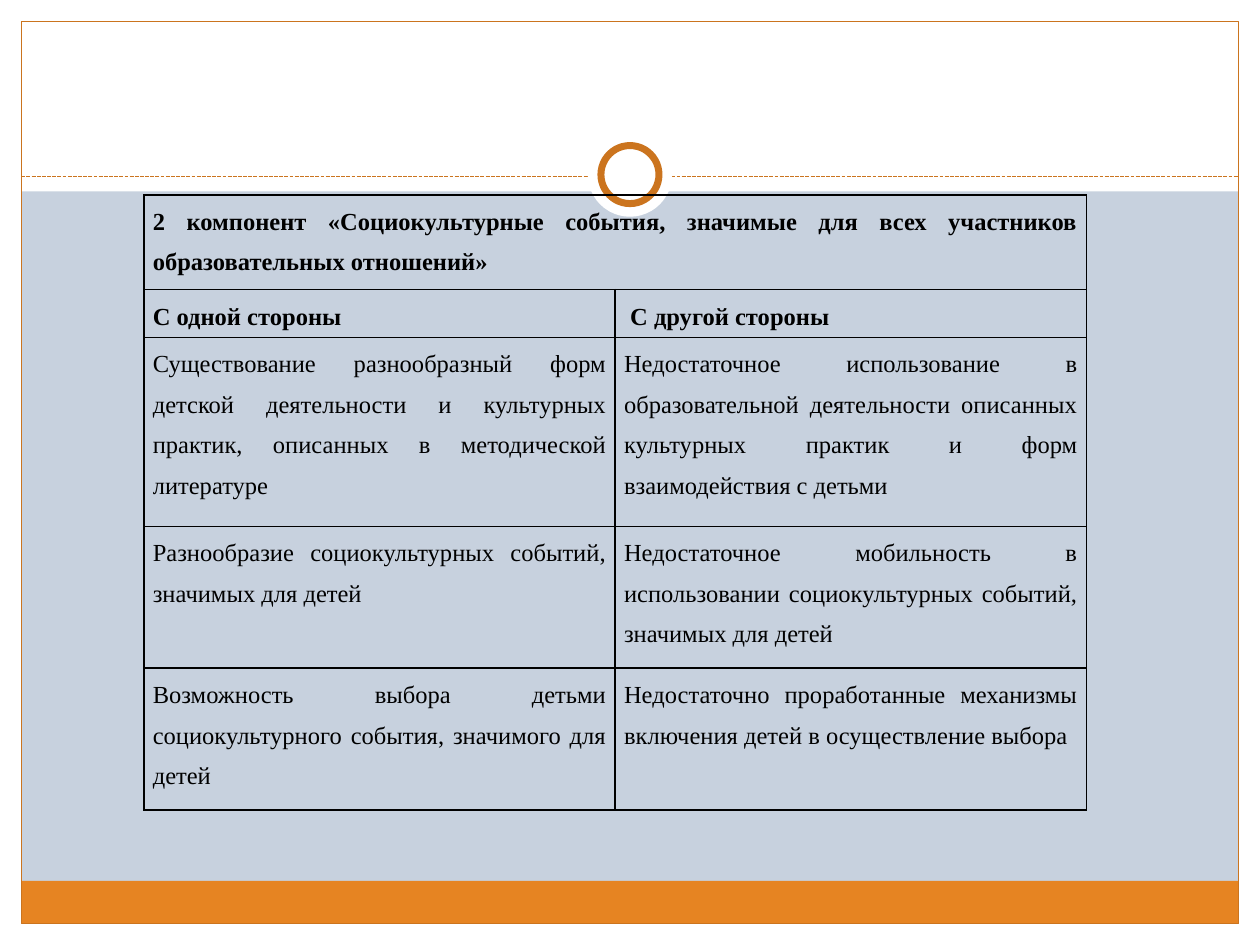
from lxml.etree import SubElement as Sub
from pptx import Presentation
from pptx.dml.color import RGBColor
from pptx.enum.dml import MSO_LINE
from pptx.enum.shapes import MSO_CONNECTOR, MSO_SHAPE as Shape
from pptx.enum.text import PP_ALIGN
from pptx.oxml.ns import qn
from pptx.util import Cm, Pt

WHITE = RGBColor(0xFF, 0xFF, 0xFF)
BLACK = RGBColor(0, 0, 0)
BLUE = RGBColor(0xC7, 0xD1, 0xDE)
ORANGE = RGBColor(0xE6, 0x84, 0x22)
RUST = RGBColor(0xCB, 0x74, 0x1E)
FONT = "Times New Roman"

TITLE = "2 компонент «Социокультурные события, значимые для всех участников образовательных отношений»"
ROWS = [
    (TITLE, ""),
    ("С одной стороны", " С другой стороны"),
    ("Существование разнообразный форм детской деятельности и культурных практик, описанных в методической литературе",
     "Недостаточное использование в образовательной деятельности описанных культурных практик и форм взаимодействия с детьми"),
    ("Разнообразие социокультурных событий, значимых для детей",
     "Недостаточное мобильность в использовании социокультурных событий, значимых для детей"),
    ("Возможность выбора детьми социокультурного события, значимого для детей",
     "Недостаточно проработанные механизмы включения детей в осуществление выбора"),
]
TALL = [1.91, 0.96, 3.81, 2.86, 2.86]
WIDE = 9.5
HEADS = 2

W, H = 25.4, 19.05
EDGE = 0.43
TOP = 3.86
BAR = 0.86
RULE = 3.56
MID = 3.52
INNER_W, INNER_H = W - 2 * EDGE, H - 2 * EDGE

BANDS = [
    (0, H - EDGE, W, EDGE, WHITE),
    (0, 0, W, TOP, WHITE),
    (0, 0, EDGE, H, WHITE),
    (W - EDGE, 0, EDGE, H, WHITE),
    (EDGE, H - EDGE - BAR, INNER_W, BAR, ORANGE),
]
DISCS = [(1.7, None, 0), (1.17, RUST, 4)]


def add(kind, x, y, w, h, fill=None, line=None, size=0.75):
    shape = slide.shapes.add_shape(kind, Cm(x), Cm(y), Cm(w), Cm(h))
    shape.shadow.inherit = False
    if fill is None:
        shape.fill.background()
    else:
        shape.fill.solid()
        shape.fill.fore_color.rgb = fill
    if line is None:
        shape.line.fill.background()
    else:
        shape.line.color.rgb = line
        shape.line.width = Pt(size)


def border(cell):
    props = cell._tc.get_or_add_tcPr()
    for side in ("a:lnL", "a:lnR", "a:lnT", "a:lnB"):
        edge = Sub(props, qn(side), w=str(Pt(1)))
        fill = Sub(edge, qn("a:solidFill"))
        Sub(fill, qn("a:srgbClr"), val=str(BLACK))


def write(cell, text, bold):
    border(cell)
    cell.fill.background()
    cell.margin_left = cell.margin_right = Cm(0.18)
    cell.margin_top = cell.margin_bottom = 0
    cell.text_frame.text = text
    para = cell.text_frame.paragraphs[0]
    para.alignment = PP_ALIGN.JUSTIFY
    para.line_spacing = 1.5
    font = para.font
    for item in (font, *(run.font for run in para.runs)):
        item.name = FONT
        item.size = Pt(14)
        item.bold = bold
        item.color.rgb = BLACK


deck = Presentation()
deck.slide_width, deck.slide_height = Cm(W), Cm(H)
slide = deck.slides.add_slide(deck.slide_layouts[6])
slide.background.fill.solid()
slide.background.fill.fore_color.rgb = BLUE

for x, y, w, h, fill in BANDS:
    add(Shape.RECTANGLE, x, y, w, h, fill)
add(Shape.RECTANGLE, EDGE, EDGE, INNER_W, INNER_H, line=RUST)

rule = slide.shapes.add_connector(
    MSO_CONNECTOR.STRAIGHT, Cm(EDGE), Cm(RULE), Cm(W - EDGE), Cm(RULE))
rule.line.color.rgb = RUST
rule.line.width = Pt(0.75)
rule.line.dash_style = MSO_LINE.SQUARE_DOT
Sub(rule._element.spPr, qn("a:effectLst"))

for size, line, width in DISCS:
    add(Shape.OVAL, (W - size) / 2, MID - size / 2, size, size, WHITE, line, width)

table = slide.shapes.add_table(
    len(ROWS), 2, Cm(2.9), Cm(3.93), Cm(2 * WIDE), Cm(sum(TALL))).table
table.first_row = table.horz_banding = False
for col in table.columns:
    col.width = Cm(WIDE)
for i, (texts, tall) in enumerate(zip(ROWS, TALL)):
    table.rows[i].height = Cm(tall)
    for j, text in enumerate(texts):
        write(table.cell(i, j), text, i < HEADS)
table.cell(0, 0).merge(table.cell(0, 1))

deck.save("out.pptx")
